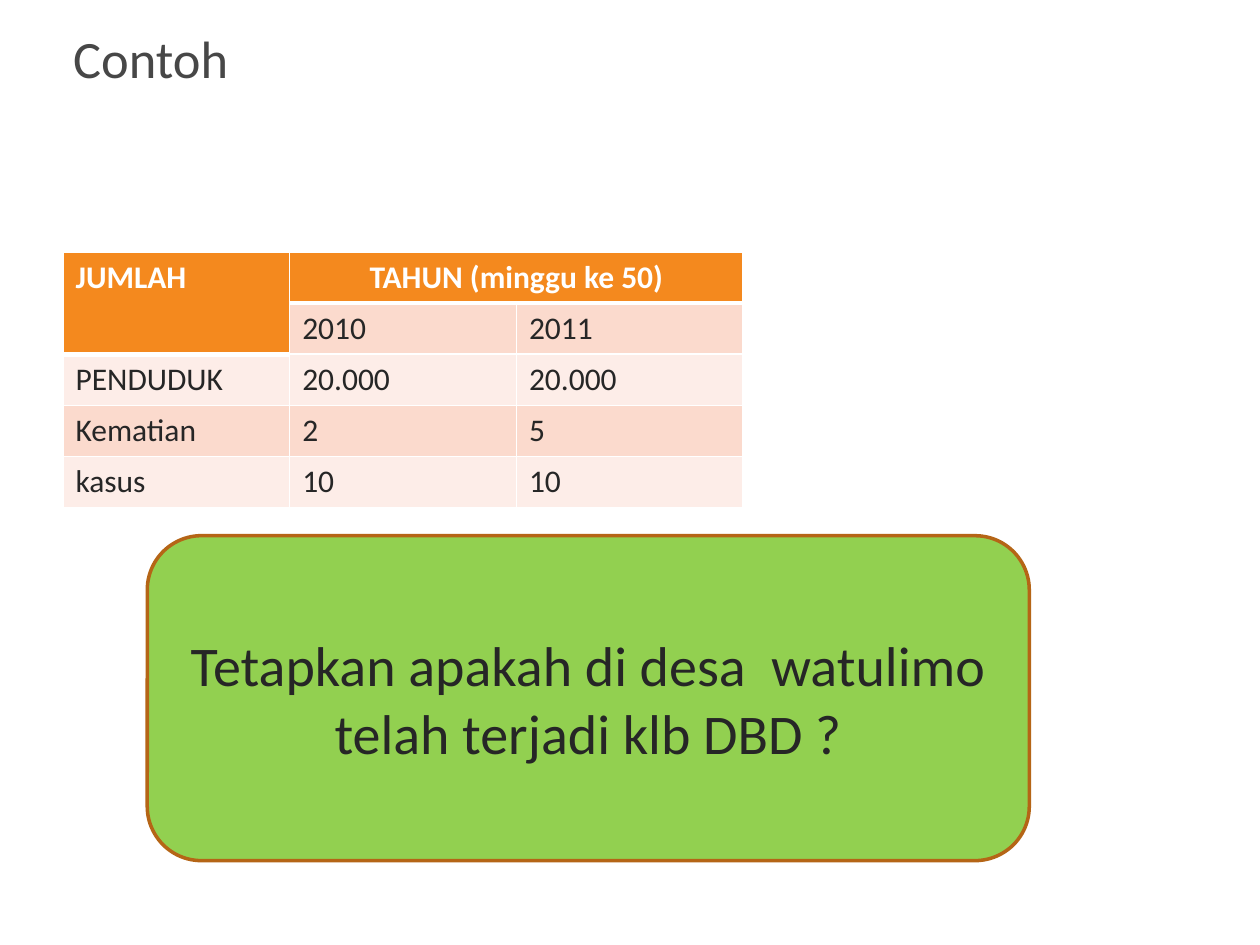
from dataclasses import dataclass

from lxml import etree
from pptx import Presentation
from pptx.dml.color import RGBColor
from pptx.enum.shapes import MSO_SHAPE
from pptx.enum.text import MSO_ANCHOR, PP_ALIGN
from pptx.oxml.ns import qn
from pptx.util import Cm, Pt


@dataclass(frozen=True)
class Theme:
    font: str = "Calibri"
    title: str = "474747"
    text: str = "262626"
    white: str = "FFFFFF"
    header: str = "F4891E"
    bands: tuple = ("FBDACD", "FDEDE8")
    box: str = "92D050"
    box_line: str = "B56516"
    title_size: int = 30
    table_size: int = 18
    box_size: int = 32


theme = Theme()


def set_text(tf, text, size, color, bold=False, align=PP_ALIGN.LEFT):
    p = tf.paragraphs[0]
    p.alignment = align
    r = p.add_run()
    r.text = text
    for name, value in {"name": theme.font, "size": Pt(size), "bold": bold}.items():
        setattr(r.font, name, value)
    r.font.color.rgb = RGBColor.from_string(color)


def set_borders(cell, widths):
    tcPr = cell._tc.get_or_add_tcPr()
    for side, width in widths.items():
        ln = etree.SubElement(tcPr, qn(f"a:ln{side}"), w=str(Pt(width)))
        fill = etree.SubElement(ln, qn("a:solidFill"))
        etree.SubElement(fill, qn("a:srgbClr"), val=theme.white)


prs = Presentation()
prs.slide_width, prs.slide_height = Cm(25.4), Cm(19.05)
s = prs.slides.add_slide(prs.slide_layouts[5])

title = s.shapes.title
place = {"left": Cm(1.22), "top": Cm(0.2), "width": Cm(23.34), "height": Cm(1.9)}
for name, value in place.items():
    setattr(title, name, value)
title.text_frame.vertical_anchor = MSO_ANCHOR.MIDDLE
set_text(title.text_frame, "Contoh", theme.title_size, theme.title)

rows = [
    ["JUMLAH", "TAHUN (minggu ke 50)", ""],
    ["", "2010", "2011"],
    ["PENDUDUK", "20.000", "20.000"],
    ["Kematian", "2", "5"],
    ["kasus", "10", "10"],
]
row_height, col_width = Cm(1.03), Cm(4.57)
table = s.shapes.add_table(
    len(rows), 3, Cm(1.27), Cm(5.08), col_width * 3, row_height * len(rows)
).table
table.cell(0, 0).merge(table.cell(1, 0))
table.cell(0, 1).merge(table.cell(0, 2))
for i, row in enumerate(rows):
    table.rows[i].height = row_height
    for j, text in enumerate(row):
        cell = table.cell(i, j)
        last_header = 1 if j == 0 else 0
        is_header = i <= last_header
        set_borders(cell, {
            "L": 1,
            "R": 1,
            "T": 3 if i == last_header + 1 else 1,
            "B": 3 if is_header else 1,
        })
        cell.fill.solid()
        fill = theme.header if is_header else theme.bands[(i - 1) % 2]
        cell.fill.fore_color.rgb = RGBColor.from_string(fill)
        if text:
            color = theme.white if is_header else theme.text
            align = PP_ALIGN.CENTER if (i, j) == (0, 1) else PP_ALIGN.LEFT
            set_text(cell.text_frame, text, theme.table_size, color, is_header, align)

box = s.shapes.add_shape(
    MSO_SHAPE.ROUNDED_RECTANGLE, Cm(2.97), Cm(10.8), Cm(17.78), Cm(6.55)
)
box.shadow.inherit = False
box.fill.solid()
box.fill.fore_color.rgb = RGBColor.from_string(theme.box)
box.line.color.rgb = RGBColor.from_string(theme.box_line)
box.line.width = Pt(2)
tf = box.text_frame
for name, value in {"word_wrap": True, "vertical_anchor": MSO_ANCHOR.MIDDLE}.items():
    setattr(tf, name, value)
set_text(
    tf,
    "Tetapkan apakah di desa  watulimo telah terjadi klb DBD ?",
    theme.box_size,
    theme.text,
    align=PP_ALIGN.CENTER,
)

prs.save("out.pptx")
